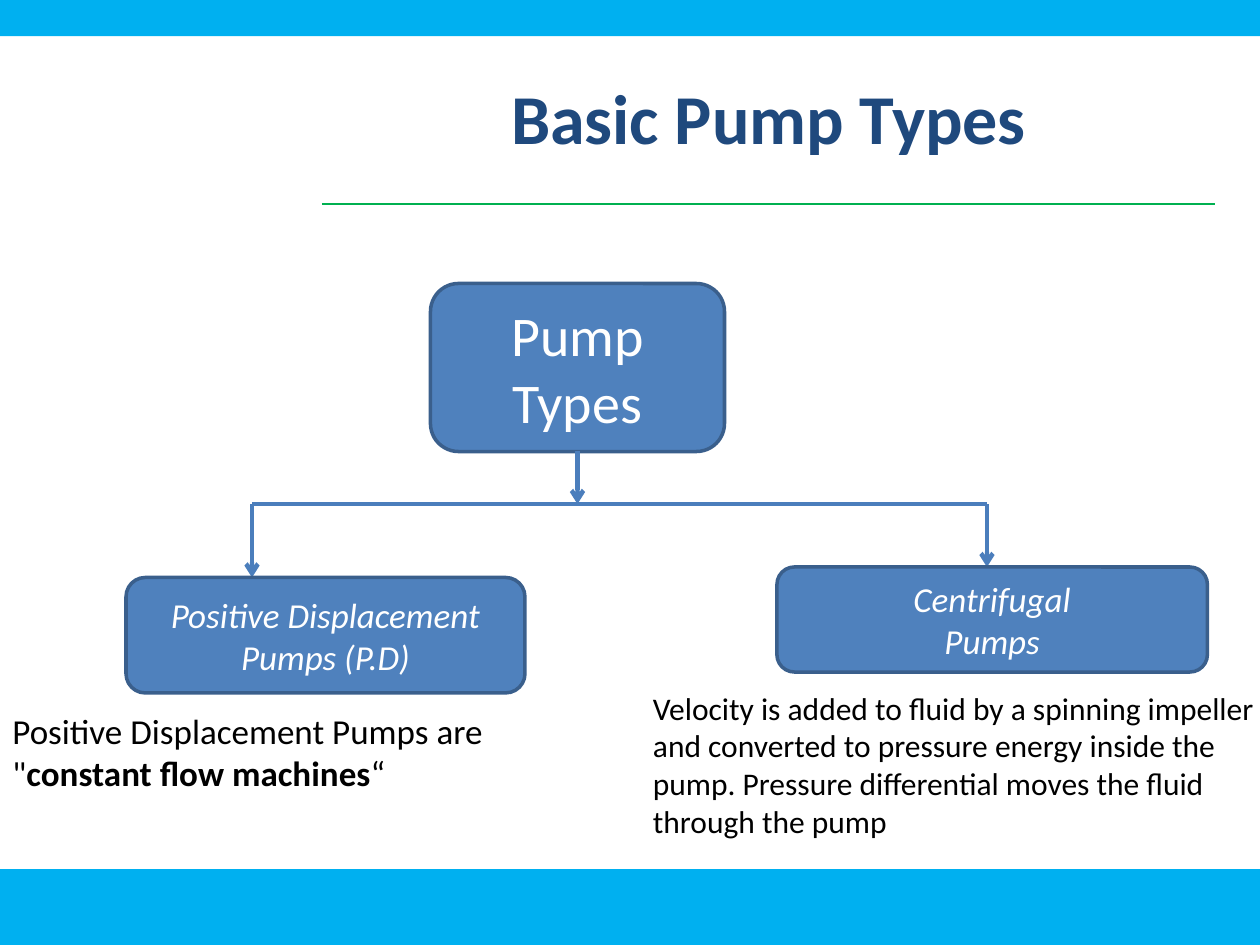
from lxml import etree
from pptx import Presentation
from pptx.dml.color import RGBColor
from pptx.enum.shapes import MSO_CONNECTOR, MSO_SHAPE
from pptx.enum.text import MSO_ANCHOR, PP_ALIGN
from pptx.oxml.ns import qn
from pptx.util import Pt

RECT, ROUND = MSO_SHAPE.RECTANGLE, MSO_SHAPE.ROUNDED_RECTANGLE
STRAIGHT = MSO_CONNECTOR.STRAIGHT
CENTER, LEFT = PP_ALIGN.CENTER, PP_ALIGN.LEFT
MIDDLE, TOP = MSO_ANCHOR.MIDDLE, MSO_ANCHOR.TOP

WIDTH, HEIGHT = 720, 540
FONT = "Calibri"
BAND, RULE = "00B0F0", "00B050"
NODE, NODE_EDGE, ARROW = "4F81BD", "3A5F8C", "4B7EBC"
TITLE, WHITE, BLACK = "1F497D", "FFFFFF", "000000"


def color(value):
    return RGBColor.from_string(value)


def add_block(slide, kind, box, fill, edge=None):
    s = slide.shapes.add_shape(kind, *map(Pt, box))
    s.shadow.inherit = False
    s.fill.solid()
    s.fill.fore_color.rgb = color(fill)
    if edge:
        s.line.color.rgb = color(edge)
        s.line.width = Pt(2)
    else:
        s.line.fill.background()
    return s


def add_line(slide, start, end, stroke, width, arrow=False):
    c = slide.shapes.add_connector(STRAIGHT, *map(Pt, (*start, *end)))
    c.line.color.rgb = color(stroke)
    c.line.width = Pt(width)
    if arrow:
        etree.SubElement(c.line._get_or_add_ln(), qn("a:tailEnd"), type="arrow")
    etree.SubElement(c._element.spPr, qn("a:effectLst"))


def write(s, paragraphs, size, ink, align=CENTER, anchor=MIDDLE, bold=False, italic=False):
    """Each paragraph is a list of (text, bold) runs or a plain string."""
    tf = s.text_frame
    tf.word_wrap = True
    tf.vertical_anchor = anchor
    for i, runs in enumerate(paragraphs):
        p = tf.add_paragraph() if i else tf.paragraphs[0]
        p.alignment = align
        for text, heavy in [(runs, bold)] if isinstance(runs, str) else runs:
            r = p.add_run()
            r.text = text
            r.font.name, r.font.size = FONT, Pt(size)
            r.font.bold, r.font.italic = heavy, italic
            r.font.color.rgb = color(ink)


def add_frame(slide, top_height, bottom_height):
    add_block(slide, RECT, (0, HEIGHT - bottom_height, WIDTH, bottom_height), BAND)
    add_block(slide, RECT, (0, 0, WIDTH, top_height), BAND)


def add_title(slide, box, text):
    left, top, width, height = box
    s = slide.shapes.title
    s.left, s.top, s.width, s.height = map(Pt, box)
    write(s, [text], 40, TITLE, bold=True)
    rule_y = top + height + 5
    add_line(slide, (left, rule_y), (left + width, rule_y), RULE, 0.75)


def add_node(slide, box, paragraphs, size, italic=False):
    s = add_block(slide, ROUND, box, NODE, NODE_EDGE)
    write(s, paragraphs, size, WHITE, italic=italic)


def add_note(slide, box, paragraphs, size):
    s = slide.shapes.add_textbox(*map(Pt, box))
    write(s, paragraphs, size, BLACK, LEFT, TOP)


def add_tree(slide, root, branches, bus_y):
    # Root node and its stem
    left, top, width, height = root
    add_node(slide, root, ["Pump Types"], 32)
    stem_x = left + width / 2
    add_line(slide, (stem_x, top + height), (stem_x, bus_y), ARROW, 2.5, True)

    # Horizontal bus, then a drop to each branch
    drops = [drop for drop, _, _ in branches]
    add_line(slide, (min(drops), bus_y), (max(drops), bus_y), ARROW, 2.5)
    for drop, box, paragraphs in branches:
        add_line(slide, (drop, bus_y), (drop, box[1]), ARROW, 2.5, True)
        add_node(slide, box, paragraphs, 20, italic=True)


def main():
    prs = Presentation()
    prs.slide_width, prs.slide_height = Pt(WIDTH), Pt(HEIGHT)
    slide = prs.slides.add_slide(prs.slide_layouts[5])

    add_frame(slide, 20.6, 43.4)
    add_title(slide, (184, 21.6, 510.5, 90), "Basic Pump Types")

    # Each branch: x of its arrow, box, text
    branches = [
        (144, (72, 330, 228, 66), ["Positive Displacement Pumps (P.D)"]),
        (564, (444, 324, 246, 60), ["Centrifugal", "Pumps"]),
    ]
    add_tree(slide, (246, 162, 168, 96), branches, 288)

    # Explanations under the branches
    add_note(slide, (0, 402, 330, 55.7),
             [[('Positive Displacement Pumps are "', False),
               ("constant flow machines", True), ("“", False)]], 20)
    add_note(slide, (366, 390, 372, 94.5),
             ["Velocity is added to fluid by a spinning impeller and converted to "
              "pressure energy inside the pump. Pressure differential moves the "
              "fluid through the pump"], 18)

    prs.save("out.pptx")


if __name__ == "__main__":
    main()
